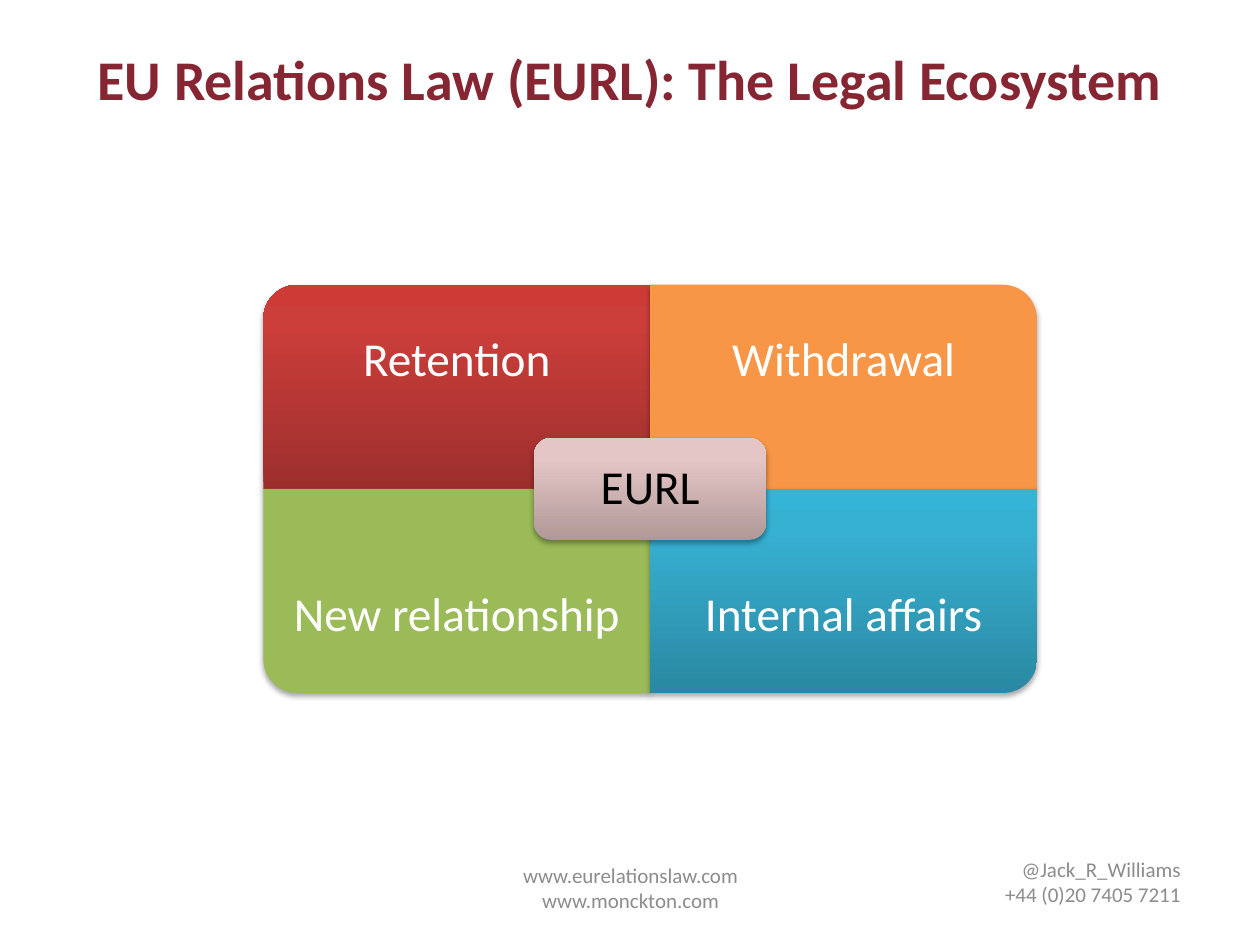
from pptx import Presentation
from pptx.dml.color import RGBColor
from pptx.enum import shapes, text
from pptx.oxml import parse_xml
from pptx.oxml.ns import nsdecls
from pptx.util import Inches, Pt

FONT = "Calibri"
MAROON = RGBColor(0x86, 0x26, 0x33)
GREY = RGBColor(0x8C, 0x8C, 0x8C)
WHITE = RGBColor(0xFF, 0xFF, 0xFF)
BLACK = RGBColor(0, 0, 0)
ORANGE = RGBColor(0xF7, 0x96, 0x46)
GREEN = RGBColor(0x9B, 0xBB, 0x59)
# Gradients run from the bottom edge (0 %) through 80 % to the top edge
RED_FADE = [RGBColor.from_string(c) for c in ("9C2F2D", "CB3E3A", "CE3B37")]
BLUE_FADE = [RGBColor.from_string(c) for c in ("2A88A2", "37B1D2", "34B4D6")]
PINK_FADE = [RGBColor.from_string(c) for c in ("B09998", "E5C6C6", "E6C7C6")]
FADE_STOPS = (0, 80, 100)

# Content
TITLE = "EU Relations Law (EURL): The Legal Ecosystem"
WEBSITES = ["www.eurelationslaw.com", "www.monckton.com"]
CONTACT = ["@Jack_R_Williams", "+44 (0)20 7405 7211"]
HUB = "EURL"
QUADRANTS = [  # label, column, row, rotation, fill
    ("Retention", 0, 0, 270, RED_FADE),
    ("Withdrawal", 1, 0, 0, ORANGE),
    ("New relationship", 0, 1, 180, GREEN),
    ("Internal affairs", 1, 1, 90, BLUE_FADE),
]

# Matrix geometry, in inches
LEFT, TOP = 2.09, 2.26
QUAD_W, QUAD_H = 3.07, 1.62
LABEL_H = QUAD_H * 0.75
HUB_W, HUB_H = QUAD_W * 0.6, QUAD_H * 0.5
HUB_INSET = 0.04

prs = Presentation()
prs.slide_width, prs.slide_height = Inches(10), Inches(7.5)
slide = prs.slides.add_slide(prs.slide_layouts[6])


def add_text(lines, x, y, w, h, size=12, color=GREY, bold=False,
             align=text.PP_ALIGN.CENTER, anchor=text.MSO_ANCHOR.MIDDLE,
             inset=None, spacing=None):
    box = slide.shapes.add_textbox(*map(Inches, (x, y, w, h)))
    frame = box.text_frame
    frame.word_wrap = True
    frame.vertical_anchor = anchor
    if inset is not None:
        frame.margin_left = frame.margin_right = Inches(inset)
        frame.margin_top = frame.margin_bottom = Inches(inset)
    for i, line in enumerate(lines):
        para = frame.paragraphs[0] if i == 0 else frame.add_paragraph()
        para.alignment = align
        para.line_spacing = spacing
        run = para.add_run()
        run.text = line
        run.font.name, run.font.size = FONT, Pt(size)
        run.font.bold, run.font.color.rgb = bold, color


def add_panel(preset, x, y, w, h, fill, rotation=0):
    """Borderless panel with a soft shadow; x, y, w, h are as seen on the slide."""
    if rotation % 180:  # the unrotated frame shares the centre, sides swapped
        x, y, w, h = x + (w - h) / 2, y + (h - w) / 2, h, w
    panel = slide.shapes.add_shape(preset, *map(Inches, (x, y, w, h)))
    panel.rotation = rotation
    panel.line.fill.background()
    props = panel._element.spPr
    if isinstance(fill, list):
        stops = "".join(
            f'<a:gs pos="{pos * 1000}"><a:srgbClr val="{color}"/></a:gs>'
            for pos, color in zip(FADE_STOPS, fill))
        props.insert(2, parse_xml(
            f'<a:gradFill {nsdecls("a")} rotWithShape="0"><a:gsLst>{stops}</a:gsLst>'
            '<a:lin ang="16200000" scaled="0"/></a:gradFill>'))
    else:
        panel.fill.solid()
        panel.fill.fore_color.rgb = fill
    panel.shadow.inherit = False
    props[-1].append(parse_xml(
        f'<a:outerShdw {nsdecls("a")} blurRad="{Pt(3.1)}" dist="{Pt(1.8)}" '
        'dir="5400000" rotWithShape="0"><a:srgbClr val="000000">'
        '<a:alpha val="35000"/></a:srgbClr></a:outerShdw>'))


# Footer and title
add_text(WEBSITES, 3.42, 6.74, 3.17, 0.61)
add_text([TITLE], 0.5, 0.3, 9, 1.25, size=32, color=MAROON, bold=True,
         anchor=text.MSO_ANCHOR.TOP)
add_text(CONTACT, 7.14, 6.66, 2.33, 0.67, align=text.PP_ALIGN.RIGHT)

# Four quadrants, labels held to the outer edge
for label, col, row, rotation, fill in QUADRANTS:
    x, y = LEFT + col * QUAD_W, TOP + row * QUAD_H
    add_panel(shapes.MSO_SHAPE.ROUND_1_RECTANGLE, x, y, QUAD_W, QUAD_H, fill, rotation)
    add_text([label], x, y + row * (QUAD_H - LABEL_H), QUAD_W, LABEL_H,
             size=27, color=WHITE, inset=0.21, spacing=0.9)

# Central hub
hub_x, hub_y = LEFT + QUAD_W - HUB_W / 2, TOP + QUAD_H - HUB_H / 2
add_panel(shapes.MSO_SHAPE.ROUNDED_RECTANGLE, hub_x, hub_y, HUB_W, HUB_H, PINK_FADE)
add_text([HUB], hub_x + HUB_INSET, hub_y + HUB_INSET,
         HUB_W - 2 * HUB_INSET, HUB_H - 2 * HUB_INSET,
         size=27, color=BLACK, inset=0.11, spacing=0.9)

prs.save("out.pptx")
